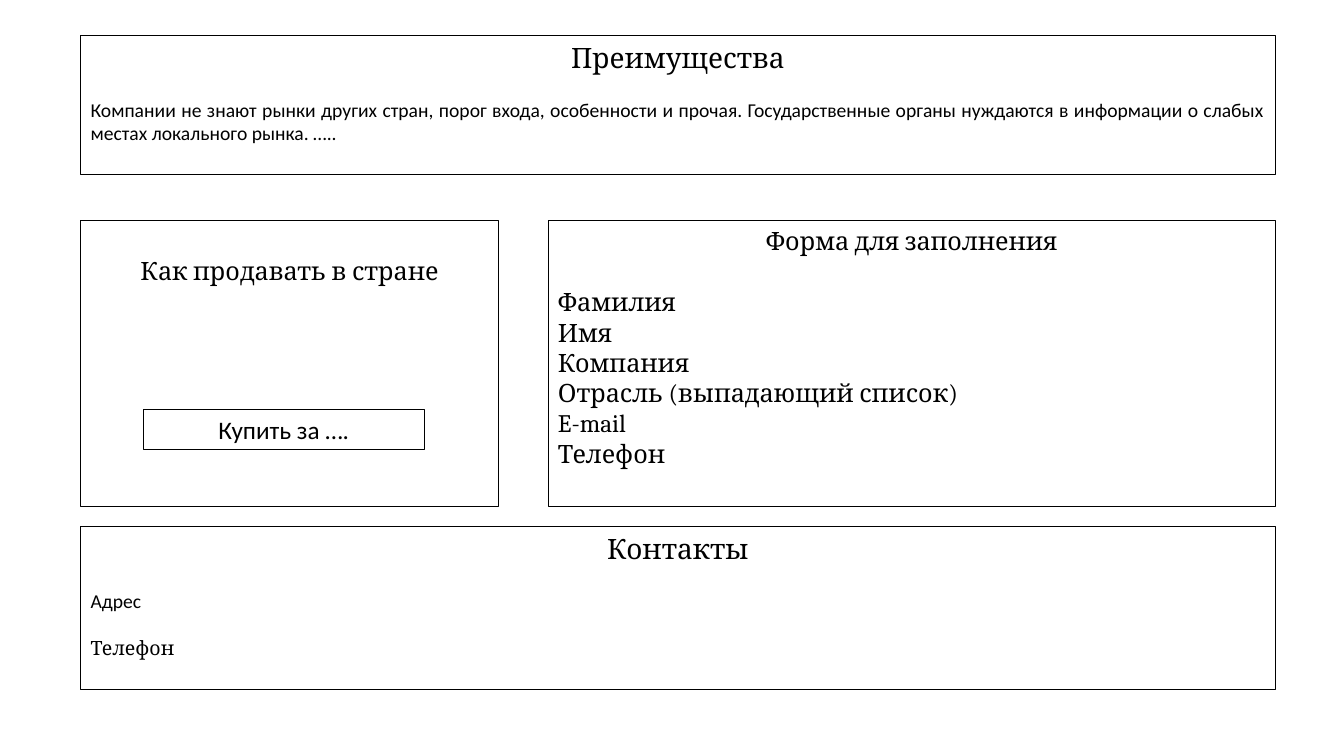
import pptx
import pptx.dml.color
import pptx.enum.shapes
import pptx.enum.text
import pptx.util

Pt = pptx.util.Pt
ALIGN = pptx.enum.text.PP_ALIGN
BLACK = pptx.dml.color.RGBColor(0, 0, 0)
WHITE = pptx.dml.color.RGBColor(255, 255, 255)
HEAD_FONT, BODY_FONT = "Cambria", "Calibri"

LEFT, WIDTH = 57.6, 853.2
RIGHT = LEFT + WIDTH
MIDDLE_TOP, MIDDLE_HEIGHT = 157.7, 203.8
FORM_LEFT = 391.5
FIELDS = ["Фамилия", "Имя", "Компания", "Отрасль (выпадающий список)",
          "E-mail", "Телефон"]


def add_box(s, left, top, width, height, inset_top=3.6):
    """Add an outlined rectangle and return its text frame."""
    sp = s.shapes.add_shape(pptx.enum.shapes.MSO_SHAPE.RECTANGLE,
                            Pt(left), Pt(top), Pt(width), Pt(height))
    sp.shadow.inherit = False
    sp.fill.background()
    sp.line.color.rgb = BLACK
    sp.line.width = Pt(0.5)
    tf = sp.text_frame
    tf.word_wrap = True
    tf.vertical_anchor = pptx.enum.text.MSO_ANCHOR.TOP
    tf.margin_top = Pt(inset_top)
    return tf


def add_text(tf, text, size=14, font=BODY_FONT, align=ALIGN.JUSTIFY, before=0):
    """Write a paragraph, filling the empty first one of the frame."""
    p = tf.paragraphs[0] if not tf.text else tf.add_paragraph()
    p.alignment = align
    p.space_before = Pt(before)
    r = p.add_run()
    r.text = text
    r.font.size = Pt(size)
    r.font.name = font
    r.font.color.rgb = BLACK


def add_heading(tf, text, size=18, font=HEAD_FONT):
    add_text(tf, text, size=size, font=font, align=ALIGN.CENTER)


def add_advantages(s):
    tf = add_box(s, LEFT, 25.2, WIDTH, 99.4)
    add_heading(tf, "Преимущества", size=20)
    add_text(tf, "Компании не знают рынки других стран, порог входа, особенности "
                 "и прочая. Государственные органы нуждаются в информации о слабых "
                 "местах локального рынка. …..", before=17)


def add_contacts(s):
    tf = add_box(s, LEFT, 375.8, WIDTH, 116.6)
    add_heading(tf, "Контакты", size=20)
    add_text(tf, "Адрес", before=17)
    add_text(tf, "Телефон", font=HEAD_FONT, before=17)


def add_offer(s):
    tf = add_box(s, LEFT, MIDDLE_TOP, 298.4, MIDDLE_HEIGHT, inset_top=25)
    add_heading(tf, "Как продавать в стране")
    button = add_box(s, 102.2, 292.3, 201, 29)
    add_heading(button, "Купить за ….", font=BODY_FONT)


def add_form(s):
    tf = add_box(s, FORM_LEFT, MIDDLE_TOP, RIGHT - FORM_LEFT, MIDDLE_HEIGHT)
    add_heading(tf, "Форма для заполнения")
    for i, field in enumerate(FIELDS):
        add_text(tf, field, size=18, font=HEAD_FONT, align=ALIGN.LEFT,
                 before=0 if i else 22)


def main():
    prs = pptx.Presentation()
    prs.slide_width, prs.slide_height = Pt(960), Pt(540)
    s = prs.slides.add_slide(prs.slide_layouts[6])
    s.background.fill.solid()
    s.background.fill.fore_color.rgb = WHITE
    add_advantages(s)
    add_contacts(s)
    add_offer(s)
    add_form(s)
    prs.save("out.pptx")


if __name__ == "__main__":
    main()
